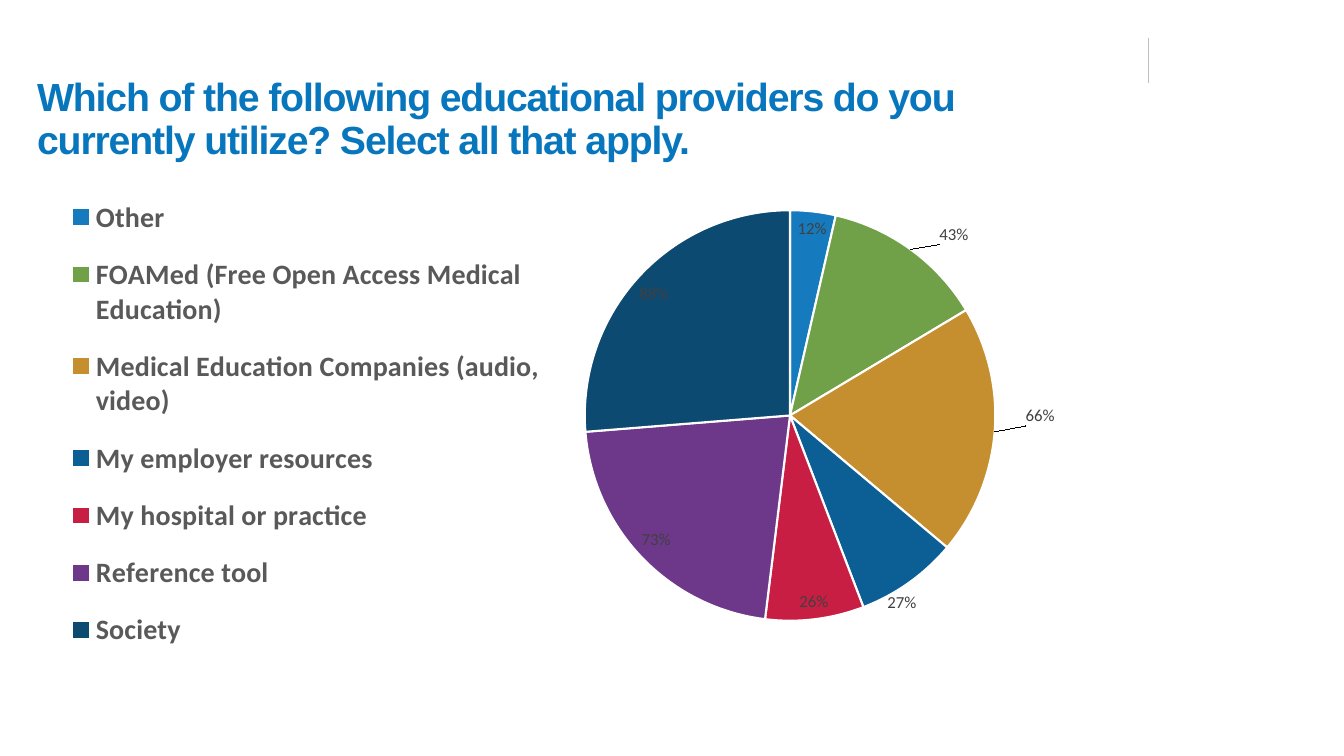
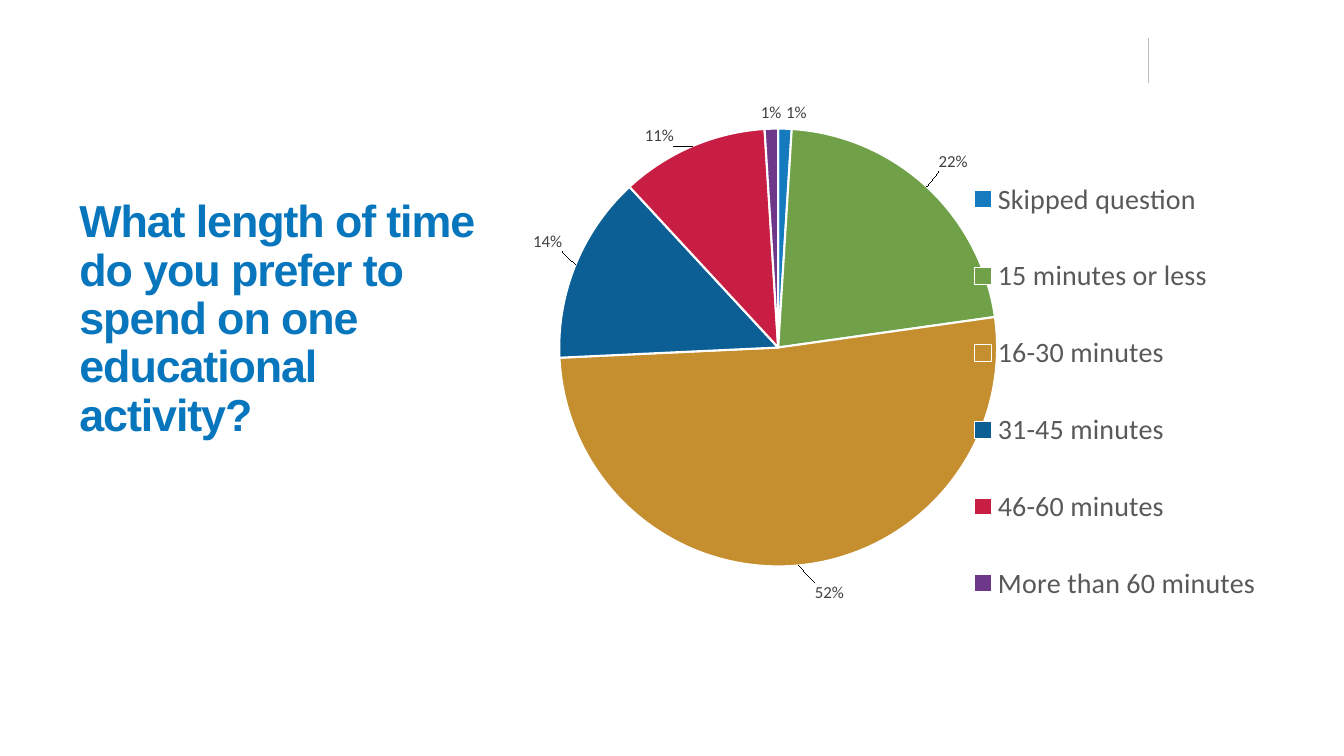
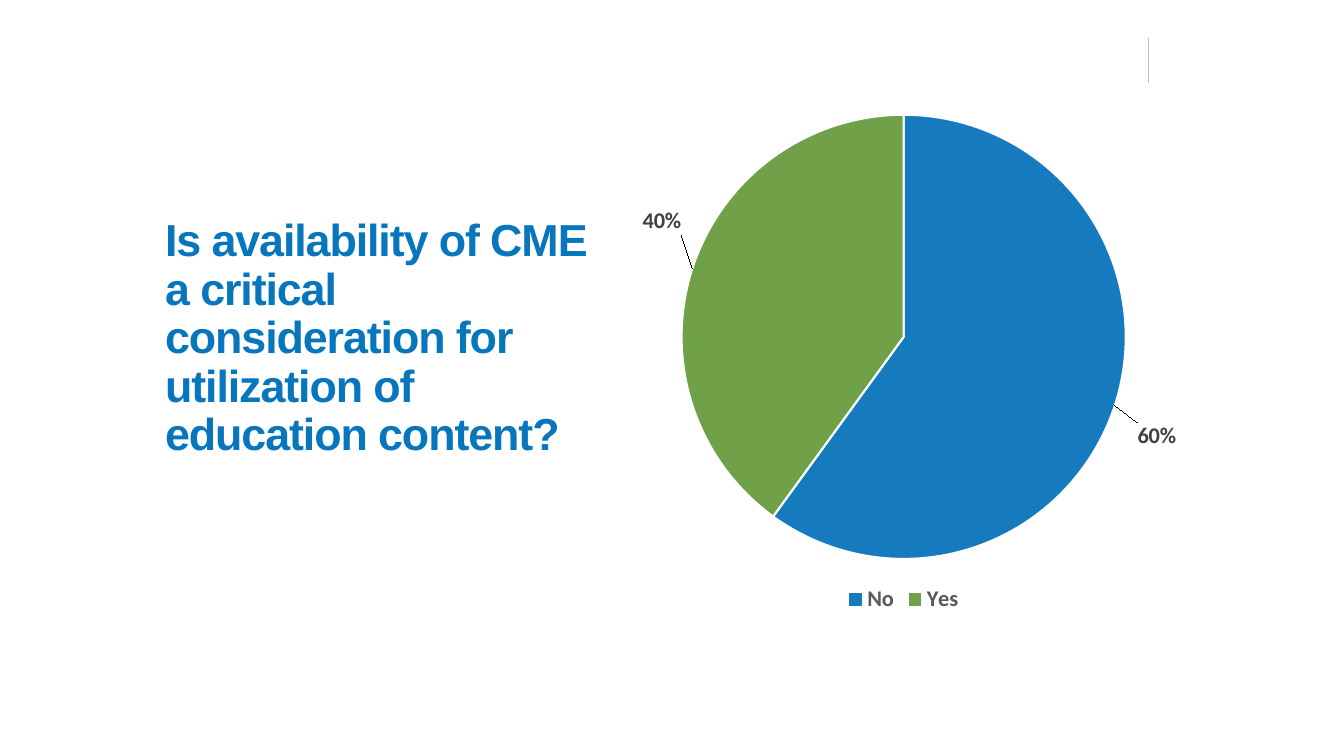
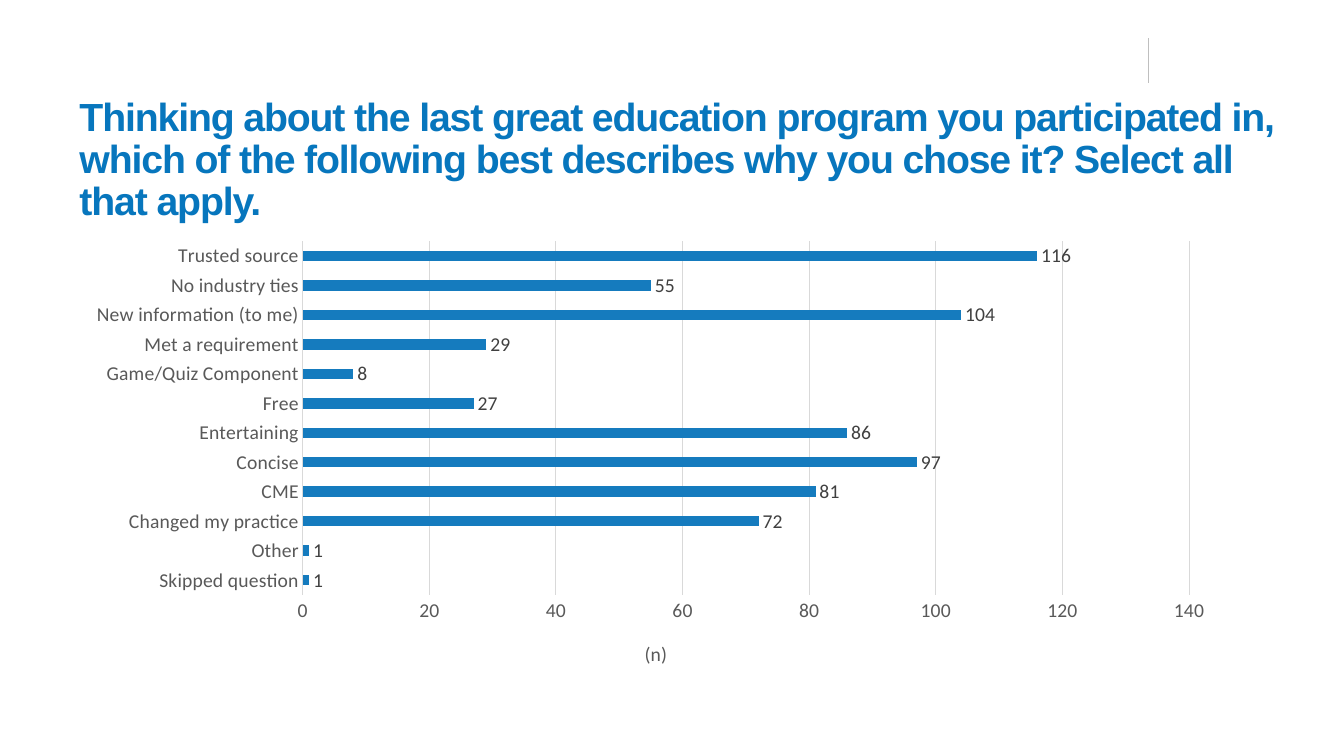
from lxml import etree
from pptx import Presentation
from pptx import util as u
from pptx.chart import data as chart_data
from pptx.dml.color import RGBColor
from pptx.enum import chart as charts, shapes, text
from pptx.oxml import ns

Pt = u.Pt
COLOURS = {"title": "0776BD", "rule": "BFBFBF", "grid": "D9D9D9", "white": "FFFFFF",
           "muted": "595959", "label": "404040", "black": "000000", "bar": "157BBE"}
SLICES = ["157BBE", "70A149", "C58E2F", "0C5F95", "C91E43", "6D3889", "0D4A72"]


class Deck:
    """Holds the survey style and the current slide, and draws each kind of element."""

    def __init__(self):
        self.presentation = Presentation()
        self.presentation.slide_width = Pt(960)
        self.presentation.slide_height = Pt(540)
        self.slide = None

    def colour(self, value):
        return RGBColor.from_string(COLOURS.get(value, value))

    def style(self, font, colour, **values):
        for name, value in values.items():
            setattr(font, name, value)
        font.color.rgb = self.colour(colour)

    def chart_style(self, font, colour, size, bold=False):
        self.style(font, colour, name="Calibri", size=Pt(size), bold=bold)

    def line(self, line, colour, width):
        line.color.rgb = self.colour(colour)
        line.width = Pt(width)

    def add_slide(self, title, box, size):
        self.slide = self.presentation.slides.add_slide(self.presentation.slide_layouts[6])
        self.rule()
        self.title(title, box, size)

    def rule(self):
        rule = self.slide.shapes.add_connector(
            shapes.MSO_CONNECTOR.STRAIGHT, Pt(820), Pt(27.4), Pt(820), Pt(59))
        self.line(rule.line, "rule", 0.5)
        etree.SubElement(rule.element.spPr, ns.qn("a:effectLst"))

    def title(self, words, box, size):
        frame = self.slide.shapes.add_textbox(*map(Pt, box)).text_frame
        frame.word_wrap = True
        frame.vertical_anchor = text.MSO_ANCHOR.MIDDLE
        paragraph = frame.paragraphs[0]
        paragraph.line_spacing = 0.9
        run = paragraph.add_run()
        run.text = words
        self.style(run.font, "title", name="Arial", size=Pt(size), bold=True)
        run.font._element.set("spc", "-80")

    def place(self, parent, index, target=None, **values):
        for old in parent.findall(ns.qn("c:layout")):
            parent.remove(old)
        layout = etree.Element(ns.qn("c:layout"))
        manual = etree.SubElement(layout, ns.qn("c:manualLayout"))
        if target:
            values = {"layoutTarget": target, "xMode": "edge", "yMode": "edge", **values}
        for name, value in values.items():
            etree.SubElement(manual, ns.qn(f"c:{name}")).set("val", str(value))
        parent.insert(index, layout)

    def place_plot(self, chart, area):
        self.place(chart.element.xpath(".//c:plotArea")[0], 0, "inner", **dict(zip("xywh", area)))

    def chart(self, kind, box, values, number_format):
        data = chart_data.CategoryChartData(number_format=number_format)
        data.categories = list(values)
        data.add_series("Series 1", list(values.values()))
        chart = self.slide.shapes.add_chart(kind, *map(Pt, box), data).chart
        chart.has_title = False
        self.chart_style(chart.font, "black", 12)
        return chart

    def labels(self, series, position, size, bold, number_format):
        labels = series.data_labels
        labels.show_value = True
        labels.number_format = number_format
        labels.number_format_is_linked = False
        labels.position = position
        self.chart_style(labels.font, "label", size, bold)

    def pie(self, box, values, area, legend_size, legend_bold, legend_area=None,
            label_size=12, label_bold=False, shifts=None):
        chart = self.chart(charts.XL_CHART_TYPE.PIE, box, values, "0%")
        chart.plots[0].vary_by_categories = True
        series = chart.plots[0].series[0]
        for index, colour in enumerate(SLICES[:len(values)]):
            slice_format = series.points[index].format
            slice_format.fill.solid()
            slice_format.fill.fore_color.rgb = self.colour(colour)
            self.line(slice_format.line, "white", 1.5)
        best_fit = charts.XL_LABEL_POSITION.BEST_FIT
        self.labels(series, best_fit, label_size, label_bold, "0%")
        for index, (x, y) in (shifts or {}).items():
            label = series.points[index].data_label
            self.chart_style(label.font, "label", label_size, label_bold)
            label.position = best_fit
            element = chart.element.xpath(f".//c:dLbl[c:idx/@val='{index}']")[0]
            self.place(element, 1, x=x, y=y)
        self.place_plot(chart, area)
        chart.has_legend = True
        legend = chart.legend
        legend.include_in_layout = False
        legend.position = charts.XL_LEGEND_POSITION.BOTTOM
        self.chart_style(legend.font, "muted", legend_size, legend_bold)
        if legend_area:
            legend.position = charts.XL_LEGEND_POSITION.RIGHT
            self.place(chart.element.xpath(".//c:legend")[0], 1, xMode="edge", yMode="edge",
                       **dict(zip("xywh", legend_area)))

    def bars(self, box, values, area, axis_title, title_place):
        chart = self.chart(charts.XL_CHART_TYPE.BAR_CLUSTERED, box, values, "General")
        chart.has_legend = False
        plot = chart.plots[0]
        plot.gap_width = 182
        plot.vary_by_categories = False
        series = plot.series[0]
        series.format.fill.solid()
        series.format.fill.fore_color.rgb = self.colour("bar")
        self.labels(series, charts.XL_LABEL_POSITION.OUTSIDE_END, 14, False, "General")
        for axis in (chart.category_axis, chart.value_axis):
            axis.major_tick_mark = axis.minor_tick_mark = charts.XL_TICK_MARK.NONE
            self.chart_style(axis.tick_labels.font, "muted", 14)
        self.line(chart.category_axis.format.line, "grid", 0.75)
        axis = chart.value_axis
        axis.minimum_scale, axis.maximum_scale, axis.major_unit = 0, 140, 20
        axis.format.line.fill.background()
        axis.has_major_gridlines = True
        self.line(axis.major_gridlines.format.line, "grid", 0.75)
        frame = axis.axis_title.text_frame
        frame.text = axis_title
        self.chart_style(frame.paragraphs[0].runs[0].font, "muted", 14)
        self.place(chart.element.xpath(".//c:valAx/c:title")[0], 1, xMode="edge", yMode="edge",
                   **dict(zip("xy", title_place)))
        self.place_plot(chart, area)


def main():
    deck = Deck()

    deck.add_slide("Which of the following educational providers do you currently utilize? "
                   "Select all that apply.", (19.4, 33.8, 682.6, 104.4), 28)
    deck.pie((30.2, 126.7, 897.8, 391),
             {"Other": 0.12, "FOAMed (Free Open Access Medical Education)": 0.43,
              "Medical Education Companies (audio, video)": 0.66,
              "My employer resources": 0.27, "My hospital or practice": 0.26,
              "Reference tool": 0.73, "Society": 0.88},
             (0.4, 0.06, 0.39, 0.75), 20, True, (0.01, 0, 0.4, 0.9),
             shifts={1: (0.02, 0), 2: (0.02, -0.03), 3: (-0.02, 0.01)})

    deck.add_slide("What length of time do you prefer to spend on one educational activity?",
                   (49.7, 69.8, 312.5, 317.5), 32)
    deck.pie((343.4, 68.4, 566.6, 391),
             {"Skipped question": 0.01, "15 minutes or less": 0.22, "16-30 minutes": 0.52,
              "31-45 minutes": 0.14, "46-60 minutes": 0.11, "More than 60 minutes": 0.01},
             (0.07, 0.06, 0.61, 0.8), 20, False, (0.6, 0.08, 0.4, 0.92),
             shifts={1: (0.01, -0.02), 2: (0.02, 0.02), 3: (-0.01, -0.02), 4: (-0.02, 0.01)})

    deck.add_slide("Is availability of CME a critical consideration for utilization of "
                   "education content?", (110.9, 69.8, 319, 344.9), 32)
    deck.pie((442.1, 69.8, 406.8, 371.5), {"No": 0.6, "Yes": 0.4},
             (0.11, 0.03, 0.78, 0.86), 16, True, label_size=16, label_bold=True,
             shifts={0: (0.03, 0.03), 1: (-0.01, -0.06)})

    deck.add_slide("Thinking about the last great education program you participated in, which of "
                   "the following best describes why you chose it? Select all that apply.",
                   (49.7, 69.8, 870.5, 90), 28)
    deck.bars((49.7, 149, 833, 332.6),
              {"Skipped question": 1, "Other": 1, "Changed my practice": 72, "CME": 81,
               "Concise": 97, "Entertaining": 86, "Free": 27, "Game/Quiz Component": 8,
               "Met a requirement": 29, "New information (to me)": 104,
               "No industry ties": 55, "Trusted source": 116},
              (0.2, 0.07, 0.76, 0.76), "(n)", (0.49, 0.92))

    deck.presentation.save("out.pptx")


if __name__ == "__main__":
    main()
